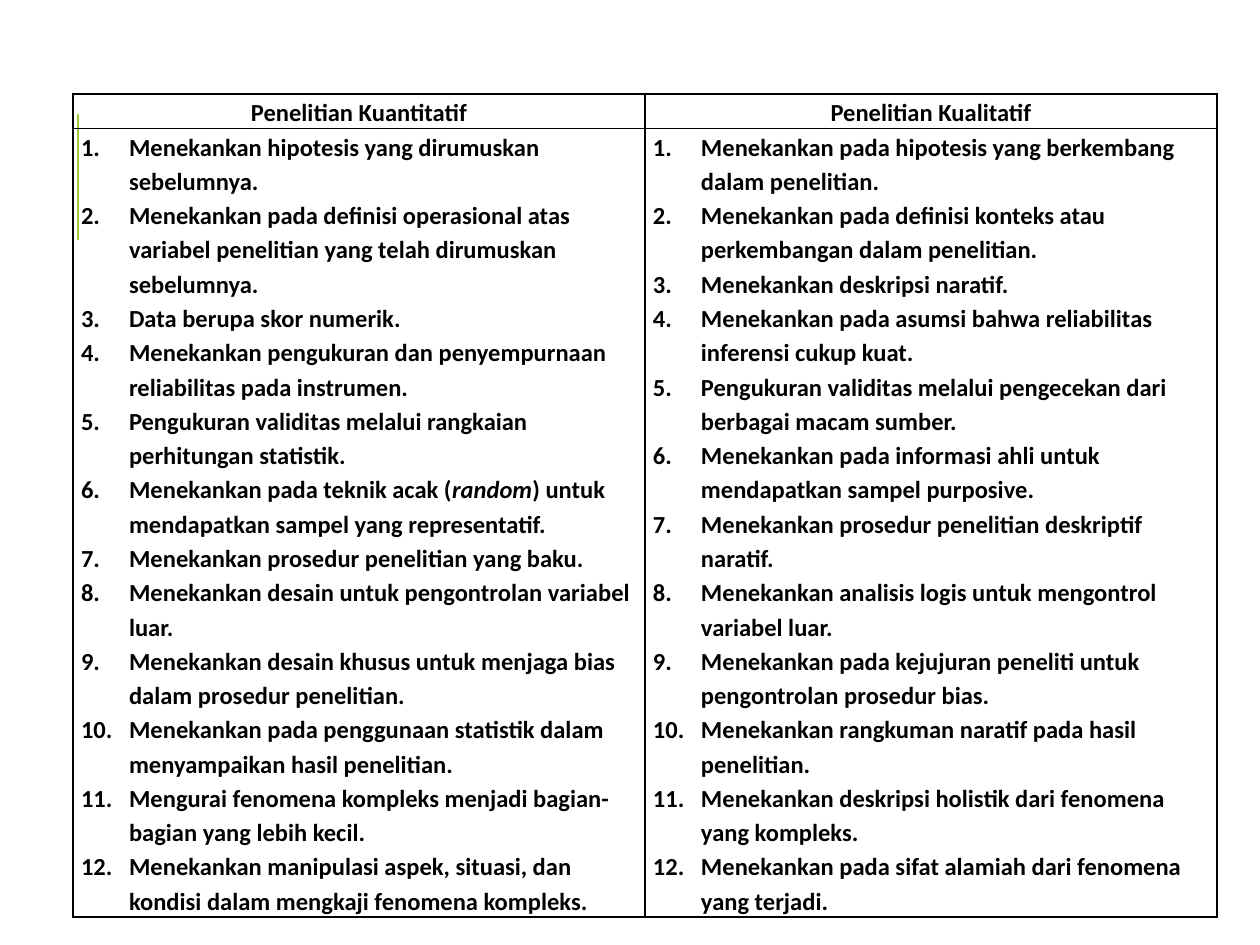
"""Build a slide comparing quantitative and qualitative research."""
from lxml import etree
from pptx import Presentation
from pptx import util as u
from pptx.dml.color import RGBColor
from pptx.enum import shapes, text
from pptx.oxml.ns import qn

PX = u.Inches(1) // 126
BLACK = RGBColor(0x00, 0x00, 0x00)
GREEN = RGBColor(0x99, 0xCB, 0x38)
FONT = "Calibri"
INDENT = 48

COLUMNS = {
    "Penelitian Kuantitatif": [
        "Menekankan hipotesis yang dirumuskan sebelumnya.",
        "Menekankan pada definisi operasional atas variabel penelitian yang telah dirumuskan sebelumnya.",
        "Data berupa skor numerik.",
        "Menekankan pengukuran dan penyempurnaan reliabilitas pada instrumen.",
        "Pengukuran validitas melalui rangkaian perhitungan statistik.",
        "Menekankan pada teknik acak (*random*) untuk mendapatkan sampel yang representatif.",
        "Menekankan prosedur penelitian yang baku.",
        "Menekankan desain untuk pengontrolan variabel luar.",
        "Menekankan desain khusus untuk menjaga bias dalam prosedur penelitian.",
        "Menekankan pada penggunaan statistik dalam menyampaikan hasil penelitian.",
        "Mengurai fenomena kompleks menjadi bagian-bagian yang lebih kecil.",
        "Menekankan manipulasi aspek, situasi, dan kondisi dalam mengkaji fenomena kompleks.",
    ],
    "Penelitian Kualitatif": [
        "Menekankan pada hipotesis yang berkembang dalam penelitian.",
        "Menekankan pada definisi konteks atau perkembangan dalam penelitian.",
        "Menekankan deskripsi naratif.",
        "Menekankan pada asumsi bahwa reliabilitas inferensi cukup kuat.",
        "Pengukuran validitas melalui pengecekan dari berbagai macam sumber.",
        "Menekankan pada informasi ahli untuk mendapatkan sampel purposive.",
        "Menekankan prosedur penelitian deskriptif naratif.",
        "Menekankan analisis logis untuk mengontrol variabel luar.",
        "Menekankan pada kejujuran peneliti untuk pengontrolan prosedur bias.",
        "Menekankan rangkuman naratif pada hasil penelitian.",
        "Menekankan deskripsi holistik dari fenomena yang kompleks.",
        "Menekankan pada sifat alamiah dari fenomena yang terjadi.",
    ],
}


def px(n):
    """Turn pixels into EMU."""
    return u.Emu(n * PX)


def write(p, content, size=14, bold=True, color=BLACK, align=None, numbered=False):
    """Fill a paragraph; text between asterisks is italic."""
    p.alignment = align
    p.line_spacing = 1.15
    if numbered:
        pPr = p._p.get_or_add_pPr()
        pPr.set("marL", str(px(INDENT)))
        pPr.set("indent", str(-px(INDENT)))
        etree.SubElement(pPr, qn("a:buFont"), typeface="+mj-lt")
        etree.SubElement(pPr, qn("a:buAutoNum"), type="arabicPeriod")
    for i, part in enumerate(content.split("*")):
        r = p.add_run()
        r.text = part
        r.font.name = FONT
        r.font.size = u.Pt(size)
        r.font.bold = bold
        r.font.italic = i % 2 == 1
        r.font.color.rgb = color


def add_borders(cell, color=BLACK, width=1):
    """Draw a solid line on all four sides of a cell."""
    tcPr = cell._tc.get_or_add_tcPr()
    for side in "LRTB":
        ln = etree.SubElement(tcPr, qn(f"a:ln{side}"), w=str(u.Pt(width)))
        fill = etree.SubElement(ln, qn("a:solidFill"))
        etree.SubElement(fill, qn("a:srgbClr"), val=str(color))


def fill_cell(cell, lines, **fmt):
    """Write lines into a bordered cell without fill."""
    add_borders(cell)
    cell.fill.background()
    cell.margin_left = cell.margin_right = px(8)
    cell.margin_top = cell.margin_bottom = 0
    tf = cell.text_frame
    for i, line in enumerate(lines):
        write(tf.add_paragraph() if i else tf.paragraphs[0], line, **fmt)


def add_line(s, x1, y1, x2, y2, color, width):
    """Add a straight line without shadow."""
    line = s.shapes.add_connector(shapes.MSO_CONNECTOR.STRAIGHT, px(x1), px(y1), px(x2), px(y2))
    line.line.color.rgb = color
    line.line.width = u.Pt(width)
    etree.SubElement(line._element.spPr, qn("a:effectLst"))


def add_comparison(s, x, y, col_width, row_heights):
    """Add the table with a heading and a numbered list per column."""
    frame = s.shapes.add_table(2, len(COLUMNS), px(x), px(y),
                               px(col_width * len(COLUMNS)), px(sum(row_heights)))
    table = frame.table
    table.first_row = table.horz_banding = False
    for row, height in zip(table.rows, row_heights):
        row.height = px(height)
    for i, (heading, points) in enumerate(COLUMNS.items()):
        table.columns[i].width = px(col_width)
        fill_cell(table.cell(0, i), [heading], align=text.PP_ALIGN.CENTER)
        fill_cell(table.cell(1, i), points, numbered=True)


def main():
    """Build and save the slide."""
    prs = Presentation()
    prs.slide_width, prs.slide_height = px(1260), px(945)
    s = prs.slides.add_slide(prs.slide_layouts[6])
    add_line(s, 78, 240, 78, 114, GREEN, 1.5)
    add_comparison(s, 73, 94, 572, [33, 776])
    prs.save("out.pptx")


if __name__ == "__main__":
    main()
